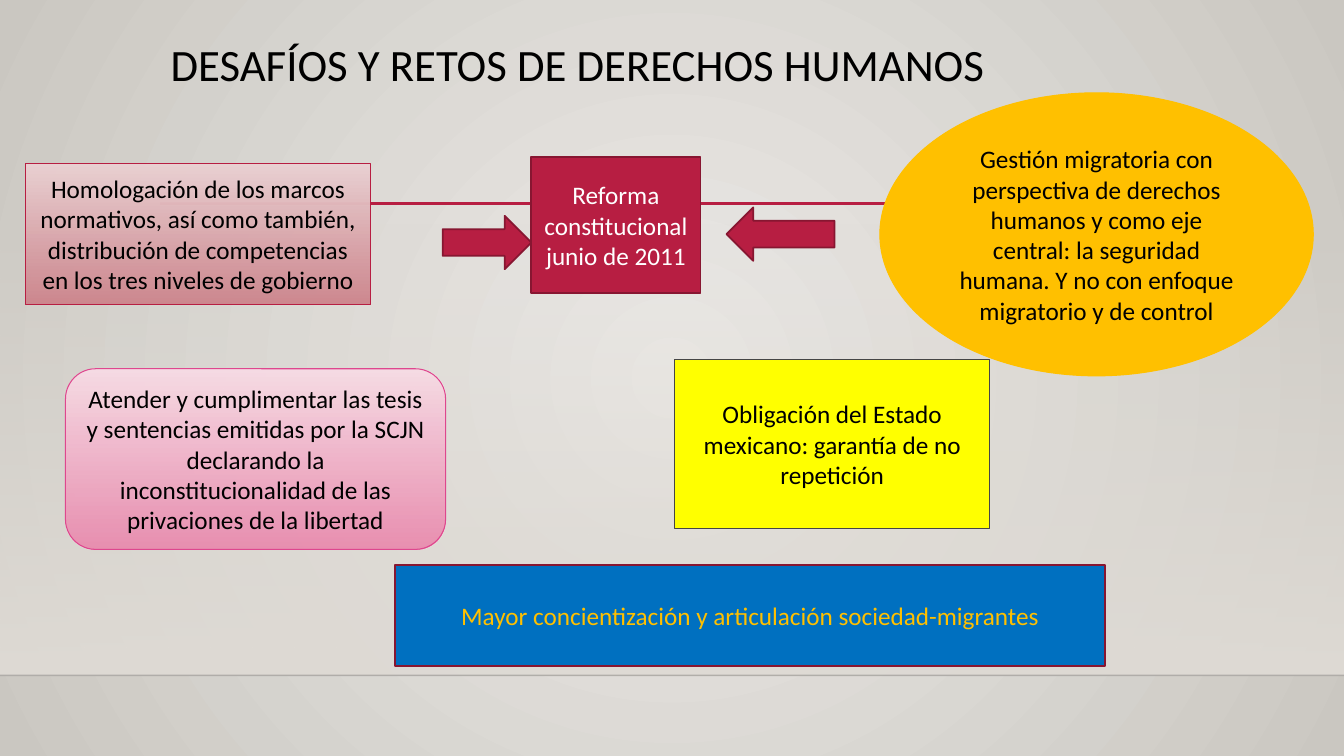
import pptx
import pptx.dml.color
import pptx.enum.shapes
import pptx.enum.text
import pptx.oxml
import pptx.oxml.ns
import pptx.util

RGB = pptx.dml.color.RGBColor
KIND = pptx.enum.shapes.MSO_SHAPE
ALIGN = pptx.enum.text.PP_ALIGN
ANCHOR = pptx.enum.text.MSO_ANCHOR
qn = pptx.oxml.ns.qn

# Colours
BLACK = RGB(0x00, 0x00, 0x00)
WHITE = RGB(0xFF, 0xFF, 0xFF)
INK = RGB(0x00, 0x00, 0x01)
RED = RGB(0xB7, 0x1E, 0x42)
WINE = RGB(0x87, 0x16, 0x31)
ROSE = RGB(0xEA, 0xD1, 0xD3)
BRICK = RGB(0xCD, 0x82, 0x8A)
BLUSH = RGB(0xF7, 0xDC, 0xE5)
PINK = RGB(0xEA, 0x8A, 0xAE)
MAUVE = RGB(0xDE, 0x47, 0x8E)
AMBER = RGB(0xFF, 0xC0, 0x00)
YELLOW = RGB(0xFF, 0xFF, 0x00)
GREY = RGB(0x45, 0x45, 0x45)
BLUE = RGB(0x00, 0x70, 0xC0)
SAND = RGB(0xDF, 0xDB, 0xD5)
PALE = RGB(0xEC, 0xEA, 0xE7)
STONE = RGB(0xCA, 0xC7, 0xC1)

# Grid of square cells
COLS, ROWS = 32, 18
FONT = "Calibri"
DOWN = '<a:lin ang="5400000" scaled="0"/>'
ROUND = ('<a:path path="circle"><a:fillToRect l="50000" t="50000" '
         'r="50000" b="50000"/></a:path>')


def cell(*nums):
    """Turn grid units into lengths."""
    return [pptx.util.Inches(n * 7.5 / ROWS) for n in nums]


def blend(root, stops, way=DOWN):
    """Replace the first solid fill by a gradient of (colour, opacity)."""
    marks = "".join(
        f'<a:gs pos="{i * 100000}"><a:srgbClr val="{tone}">'
        f'<a:alpha val="{clear * 1000}"/></a:srgbClr></a:gs>'
        for i, (tone, clear) in enumerate(stops))
    grad = pptx.oxml.parse_xml(
        f'<a:gradFill {pptx.oxml.ns.nsdecls("a")} rotWithShape="1">'
        f'<a:gsLst>{marks}</a:gsLst>{way}</a:gradFill>')
    old = root.find(".//" + qn("a:solidFill"))
    old.getparent().replace(old, grad)


def style(frame, size, tone, align):
    """Format every run of a text frame."""
    frame.word_wrap = True
    for par in frame.paragraphs:
        par.alignment = align
        for run in par.runs:
            run.font.size = pptx.util.Pt(size)
            run.font.name = FONT
            run.font.color.rgb = tone


def block(slide, kind, spot, fill, edge=None, width=0.75, text="", tone=BLACK):
    """Add a shape; fill is one colour or a list of gradient stops."""
    shape = slide.shapes.add_shape(kind, *cell(*spot))
    shape.shadow.inherit = False
    shape.fill.solid()
    if isinstance(fill, list):
        blend(shape.element.spPr, fill)
    else:
        shape.fill.fore_color.rgb = fill
    if edge is None:
        shape.line.fill.background()
    else:
        shape.line.color.rgb = edge
        shape.line.width = pptx.util.Pt(width)
    if text:
        frame = shape.text_frame
        frame.text = text
        frame.vertical_anchor = ANCHOR.MIDDLE
        style(frame, 18, tone, ALIGN.CENTER)


def rule(slide, left, right, row, tone, width, clear=100):
    """Add a level line with an opacity in percent."""
    line = slide.shapes.add_connector(
        pptx.enum.shapes.MSO_CONNECTOR.STRAIGHT, *cell(left, row, right, row))
    line.line.color.rgb = tone
    line.line.width = pptx.util.Pt(width)
    props = line.element.spPr
    if clear < 100:
        alpha = props.find(".//" + qn("a:srgbClr")).makeelement(qn("a:alpha"), {})
        alpha.set("val", str(clear * 1000))
        props.find(".//" + qn("a:srgbClr")).append(alpha)
    props.append(props.makeelement(qn("a:effectLst"), {}))


def head(slide, spot, text):
    """Fill and place the title."""
    title = slide.shapes.title
    title.left, title.top, title.width, title.height = cell(*spot)
    frame = title.text_frame
    frame.text = text
    frame.vertical_anchor = ANCHOR.TOP
    frame.auto_size = pptx.enum.text.MSO_AUTO_SIZE.NONE
    frame.paragraphs[0].line_spacing = 0.9
    style(frame, 32, BLACK, ALIGN.LEFT)


def main():
    deck = pptx.Presentation()
    deck.slide_width, deck.slide_height = cell(COLS, ROWS)
    slide = deck.slides.add_slide(deck.slide_layouts[5])

    # Backdrop
    slide.background.fill.solid()
    blend(slide.element, [(PALE, 100), (STONE, 100)], ROUND)
    block(slide, KIND.RECTANGLE, (0, 5.3, COLS, 10.78),
          [(SAND, 0), (SAND, 100)])
    rule(slide, 0, COLS, 16.08, INK, 1, 20)
    rule(slide, 3.82, 29.04, 4.85, RED, 2.5)

    head(slide, (3.82, 0.89, 25.2, 1.87), "DESAFÍOS Y RETOS DE DERECHOS HUMANOS")

    # Challenges
    block(slide, KIND.RECTANGLE, (0.6, 3.89, 8.23, 3.36),
          [(ROSE, 100), (BRICK, 92)], RED,
          text="Homologación de los marcos normativos, así como también, "
               "distribución de competencias en los tres niveles de gobierno")
    block(slide, KIND.OVAL, (20.95, 2.21, 10.32, 6.74), AMBER, AMBER,
          text="Gestión migratoria con perspectiva de derechos humanos y como "
               "eje central: la seguridad humana. Y no con enfoque migratorio "
               "y de control")
    block(slide, KIND.ROUNDED_RECTANGLE, (1.56, 8.78, 9.05, 4.3),
          [(BLUSH, 100), (PINK, 92)], MAUVE,
          text="Atender y cumplimentar las tesis y sentencias emitidas por la "
               "SCJN declarando la inconstitucionalidad de las privaciones de "
               "la libertad")
    block(slide, KIND.RECTANGLE, (16.06, 8.57, 7.51, 4.01), YELLOW, GREY,
          text="Obligación del Estado mexicano: garantía de no repetición")

    # Reform and the arrows that point to it
    block(slide, KIND.RIGHT_ARROW, (10.54, 5.14, 2.11, 1.27), RED, WINE, 1.25)
    block(slide, KIND.LEFT_ARROW, (17.3, 4.94, 2.57, 1.27), RED, WINE, 1.25)
    block(slide, KIND.RECTANGLE, (12.65, 3.74, 4.03, 3.24), RED, WINE, 1.25,
          "Reforma constitucional junio de 2011", WHITE)

    # Closing aim
    block(slide, KIND.RECTANGLE, (9.41, 13.46, 16.9, 2.4), BLUE, WINE, 1.25,
          "Mayor concientización y articulación sociedad-migrantes", AMBER)

    deck.save("out.pptx")


if __name__ == "__main__":
    main()
